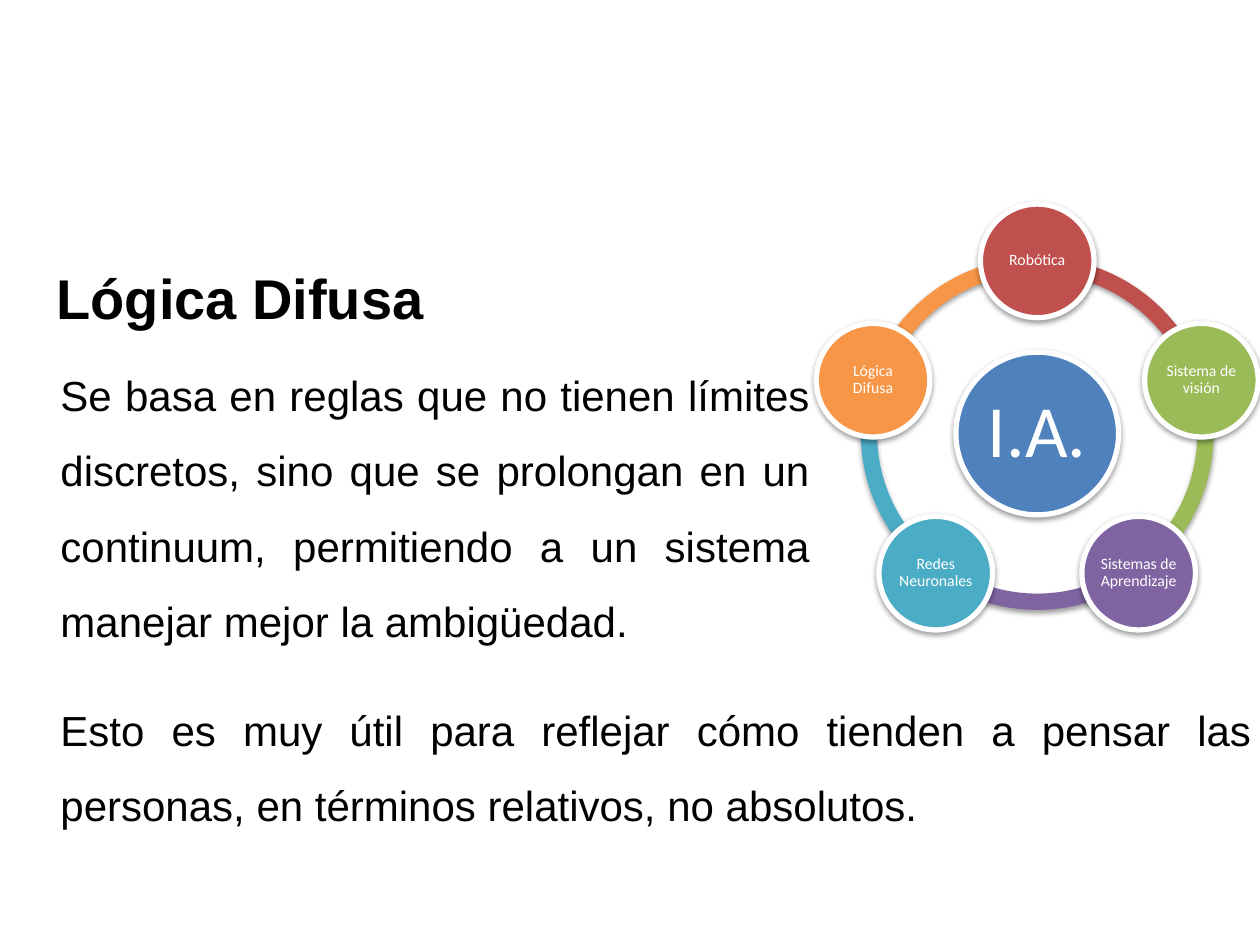
from math import cos, radians, sin

from lxml.etree import SubElement
from pptx import Presentation
from pptx.dml.color import RGBColor
from pptx.enum.shapes import MSO_SHAPE
from pptx.enum.text import MSO_ANCHOR, PP_ALIGN
from pptx.oxml.ns import qn
from pptx.util import Cm, Pt

COLORS = {
    "text": "000000",
    "white": "FFFFFF",
    "hub": "4F81BD",
    "red": "C0504D",
    "green": "9BBB59",
    "purple": "8064A2",
    "teal": "4BACC6",
    "orange": "F79646",
}
TOPICS = [
    ("Robótica", "red"),
    ("Sistema de visión", "green"),
    ("Sistemas de Aprendizaje", "purple"),
    ("Redes Neuronales", "teal"),
    ("Lógica Difusa", "orange"),
]
CENTER_X, CENTER_Y = 20.91, 8.74
ORBIT = 3.48
RING_SIZE, HUB_SIZE, TOPIC_SIZE = 7.11, 3.28, 2.29
STEP = 360 / len(TOPICS)
TOP_ANGLE = 270


def rgb(color):
    return RGBColor.from_string(COLORS[color])


def add_run(paragraph, text, size, font, color, bold=False):
    run = paragraph.add_run()
    run.text = text
    run.font.size = Pt(size)
    run.font.name = font
    run.font.bold = bold
    run.font.color.rgb = rgb(color)


def add_text(slide, text, left, top, width, height, size=24, bold=False,
             align=PP_ALIGN.JUSTIFY, spacing=1.5):
    box = slide.shapes.add_textbox(Cm(left), Cm(top), Cm(width), Cm(height))
    box.text_frame.word_wrap = True
    paragraph = box.text_frame.paragraphs[0]
    paragraph.alignment = align
    paragraph.line_spacing = spacing
    add_run(paragraph, text, size, "Arial", "text", bold)


def add_shadow(shape):
    shape.shadow.inherit = False
    effects = shape._element.spPr.find(qn("a:effectLst"))
    shadow = SubElement(effects, qn("a:outerShdw"), blurRad="40000",
                        dist="20000", dir="5400000", rotWithShape="0")
    tint = SubElement(shadow, qn("a:srgbClr"), val=COLORS["text"])
    SubElement(tint, qn("a:alpha"), val="38000")


def add_centered(slide, preset, x, y, size, color):
    shape = slide.shapes.add_shape(
        preset, Cm(x - size / 2), Cm(y - size / 2), Cm(size), Cm(size))
    shape.fill.solid()
    shape.fill.fore_color.rgb = rgb(color)
    shape.line.fill.background()
    add_shadow(shape)
    return shape


def add_arc(slide, start, color):
    arc = add_centered(slide, MSO_SHAPE.BLOCK_ARC, CENTER_X, CENTER_Y,
                       RING_SIZE, color)
    end = (start + STEP) % 360
    arc.adjustments[0] = start * 0.6
    arc.adjustments[1] = end * 0.6
    arc.adjustments[2] = 0.046


def add_circle(slide, label, x, y, size, color, font_size, inset):
    circle = add_centered(slide, MSO_SHAPE.OVAL, x, y, size, color)
    circle.line.color.rgb = rgb("white")
    circle.line.width = Pt(3)
    frame = circle.text_frame
    frame.word_wrap = True
    frame.vertical_anchor = MSO_ANCHOR.MIDDLE
    frame.margin_left = frame.margin_right = Cm(inset)
    frame.margin_top = frame.margin_bottom = Cm(inset)
    paragraph = frame.paragraphs[0]
    paragraph.alignment = PP_ALIGN.CENTER
    paragraph.line_spacing = 0.9
    add_run(paragraph, label, font_size, "Calibri", "white")


def add_wheel(slide):
    angles = [(TOP_ANGLE + i * STEP) % 360 for i in range(len(TOPICS))]
    spokes = list(zip(angles, TOPICS))
    for angle, (_, color) in reversed(spokes):
        add_arc(slide, angle, color)
    add_circle(slide, "I.A.", CENTER_X, CENTER_Y, HUB_SIZE, "hub", 42, 0.15)
    for angle, (label, color) in spokes:
        x = CENTER_X + ORBIT * cos(radians(angle))
        y = CENTER_Y + ORBIT * sin(radians(angle))
        add_circle(slide, label, x, y, TOPIC_SIZE, color, 9, 0.03)


def main():
    deck = Presentation()
    deck.slide_width, deck.slide_height = Cm(25.4), Cm(19.05)
    slide = deck.slides.add_slide(deck.slide_layouts[6])
    add_text(slide, "Se basa en reglas que no tienen límites discretos, sino "
             "que se prolongan en un continuum, permitiendo a un sistema "
             "manejar mejor la ambigüedad.", 0.97, 6.81, 15.6, 6.22)
    add_wheel(slide)
    add_text(slide, "Lógica Difusa", 0.89, 5.18, 15.19, 1.63, size=32,
             bold=True, align=PP_ALIGN.LEFT, spacing=1)
    add_text(slide, "Esto es muy útil para reflejar cómo tienden a pensar las "
             "personas, en términos relativos, no absolutos.",
             0.97, 13.56, 24.51, 3.28)
    deck.save("out.pptx")


if __name__ == "__main__":
    main()
